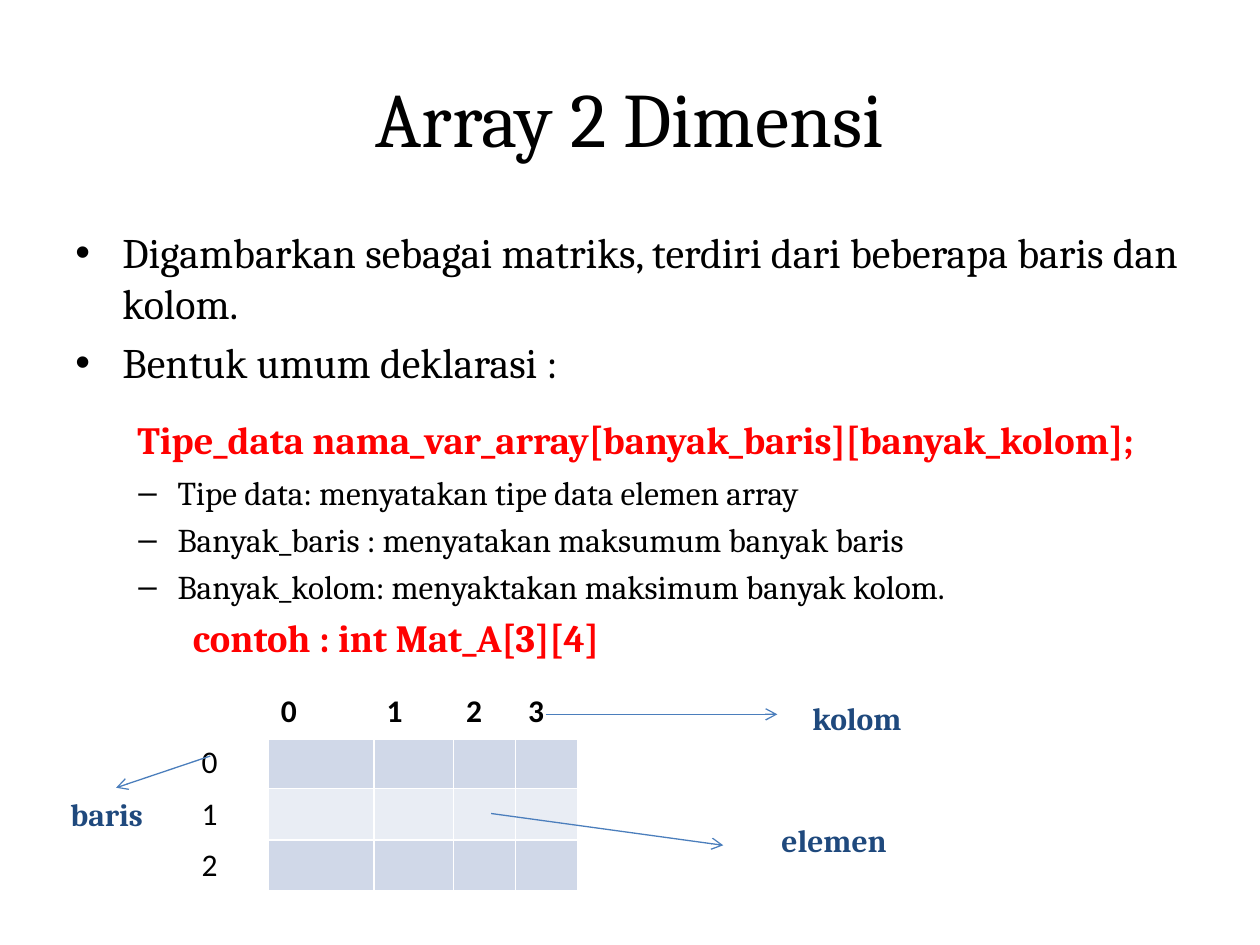
from lxml import etree
from pptx import Presentation
from pptx import util as u
from pptx.dml.color import RGBColor
from pptx.enum import shapes, text
from pptx.oxml import ns

BLACK = RGBColor(0x00, 0x00, 0x00)
WHITE = RGBColor(0xFF, 0xFF, 0xFF)
RED = RGBColor(0xFF, 0x00, 0x00)
NAVY = RGBColor(0x1F, 0x49, 0x7D)
BLUE = RGBColor(0x4B, 0x7E, 0xBC)
DARK = RGBColor(0xD0, 0xD8, 0xE8)
LIGHT = RGBColor(0xE9, 0xED, 0xF4)


def sub(parent, tag, **attrs):
    return etree.SubElement(parent, ns.qn(tag), **attrs)


class Deck:
    serif = "Cambria"
    sans = "Calibri"

    def __init__(self, wide, high):
        self.prs = Presentation()
        self.prs.slide_width, self.prs.slide_height = u.Cm(wide), u.Cm(high)
        self.slide = self.prs.slides.add_slide(self.prs.slide_layouts[6])

    def put(self, para, words, size, color, bold=False, face=serif):
        run = para.add_run()
        run.text = words
        font = run.font
        font.name, font.size, font.bold = face, u.Pt(size), bold
        font.color.rgb = color

    def frame(self, box, anchor):
        shape = self.slide.shapes.add_textbox(*map(u.Cm, box))
        frame = shape.text_frame
        frame.word_wrap = True
        frame.vertical_anchor = anchor
        return frame

    def label(self, box, words, size=18, color=NAVY, bold=True):
        para = self.frame(box, text.MSO_ANCHOR.MIDDLE).paragraphs[0]
        para.alignment = text.PP_ALIGN.CENTER
        self.put(para, words, size, color, bold)

    def body(self, box, items):
        frame = self.frame(box, text.MSO_ANCHOR.TOP)
        for i, (words, kind, left, gap) in enumerate(items):
            para = frame.add_paragraph() if i else frame.paragraphs[0]
            mark, hang, size, color = kind
            props = para._p.get_or_add_pPr()
            props.set("marL", str(u.Cm(left)))
            props.set("indent", str(-u.Cm(hang)))
            if mark:
                sub(props, "a:buFont", typeface="Arial")
                sub(props, "a:buChar", char=mark)
            else:
                sub(props, "a:buNone")
            para.space_before = u.Pt(gap)
            self.put(para, words, size, color, bold=not mark)

    def border(self, cell, base):
        props = cell._tc.get_or_add_tcPr()
        for side in "LRTB":
            width = base if side == "B" else 1
            line = sub(props, f"a:ln{side}", w=str(u.Pt(width)))
            fill = sub(line, "a:solidFill")
            sub(fill, "a:srgbClr", val=str(WHITE))

    def grid(self, left, top, cols, high, rows):
        shape = self.slide.shapes.add_table(
            len(rows), len(cols), u.Cm(left), u.Cm(top),
            u.Cm(sum(cols)), u.Cm(high * len(rows)))
        table = shape.table
        for col, wide in zip(table.columns, cols):
            col.width = u.Cm(wide)
        for r, words in enumerate(rows):
            table.rows[r].height = u.Cm(high)
            for c, word in enumerate(words):
                cell = table.cell(r, c)
                self.border(cell, 1 if r else 3)
                if r and c:
                    cell.fill.solid()
                    cell.fill.fore_color.rgb = DARK if r % 2 else LIGHT
                else:
                    cell.fill.background()
                if word:
                    self.put(cell.text_frame.paragraphs[0], word, 18,
                             BLACK, r == 0, self.sans)

    def arrow(self, *ends):
        link = self.slide.shapes.add_connector(
            shapes.MSO_CONNECTOR.STRAIGHT, *map(u.Cm, ends))
        link.line.color.rgb = BLUE
        link.line.width = u.Pt(0.75)
        props = link._element.spPr
        sub(props.find(ns.qn("a:ln")), "a:tailEnd", type="arrow")
        sub(props, "a:effectLst")


def main():
    deck = Deck(25.4, 19.05)
    deck.label((1.27, 0.76, 22.86, 3.18), "Array 2 Dimensi", 44, BLACK, False)

    point = ("•", 0.95, 24, BLACK)
    dash = ("–", 0.79, 19, BLACK)
    code = (None, 0, 22, RED)
    deck.body((1.27, 4.45, 22.86, 12.57), [
        ("Digambarkan sebagai matriks, terdiri dari beberapa baris dan kolom.",
         point, 0.95, 0),
        ("Bentuk umum deklarasi :", point, 0.95, 5),
        ("Tipe_data nama_var_array[banyak_baris][banyak_kolom];",
         code, 1.25, 16.5),
        ("Tipe data: menyatakan tipe data elemen array", dash, 2.06, 6),
        ("Banyak_baris : menyatakan maksumum banyak baris", dash, 2.06, 4),
        ("Banyak_kolom: menyaktakan maksimum banyak kolom.", dash, 2.06, 4),
        ("contoh : int Mat_A[3][4]", code, 2.37, 4.5),
    ])

    head = ["", "0", "1", "2", "3"]
    rows = [head] + [[str(n), "", "", "", ""] for n in range(3)]
    deck.grid(3.81, 13.84, (1.6, 2.13, 1.6, 1.25, 1.25), 1.03, rows)

    deck.arrow(11, 14.4, 15.67, 14.4)
    deck.label((16.08, 13.97, 2.39, 1.02), "kolom")
    deck.arrow(9.9, 16.4, 14.58, 17.04)
    deck.label((14.81, 16.4, 4.01, 1.07), "elemen")
    deck.arrow(4.24, 15.24, 2.34, 15.88)
    deck.label((0.64, 15.88, 3.02, 1.07), "baris")
    deck.prs.save("out.pptx")


if __name__ == "__main__":
    main()
